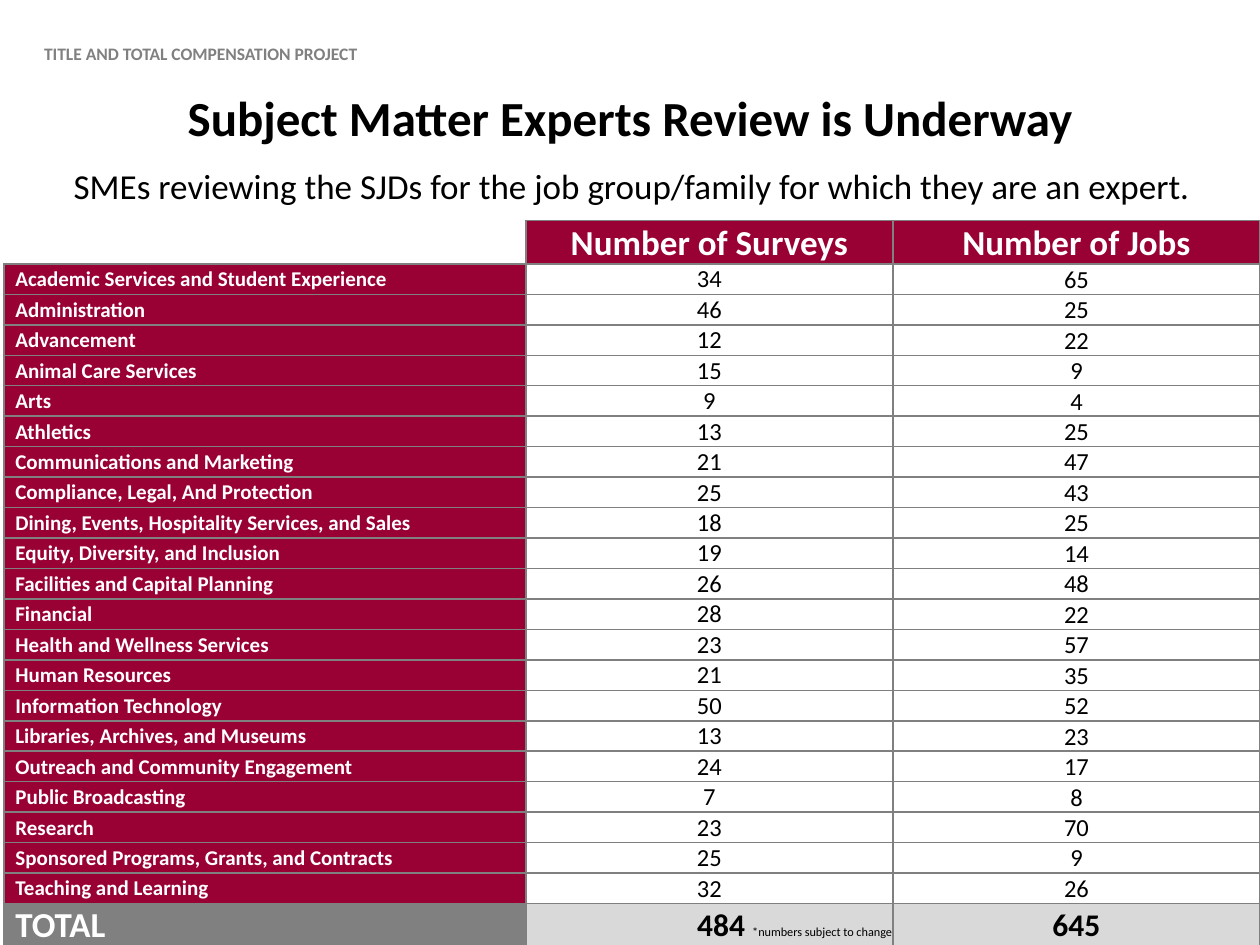
from typing import NamedTuple

import pptx
import pptx.dml.color
import pptx.enum.text
import pptx.oxml
import pptx.oxml.ns
import pptx.util
from pptx.util import Cm

MAROON, GRAY, PALE = "990033", "808080", "D9D9D9"
BLACK, WHITE = "000000", "FFFFFF"
ALIGN = pptx.enum.text.PP_ALIGN
ANCHOR = pptx.enum.text.MSO_ANCHOR


class JobGroup(NamedTuple):
    name: str
    surveys: int
    jobs: int


class Margins(NamedTuple):
    left: float
    top: float
    right: float
    bottom: float


JOB_GROUPS = [
    JobGroup("Academic Services and Student Experience", 34, 65),
    JobGroup("Administration", 46, 25),
    JobGroup("Advancement", 12, 22),
    JobGroup("Animal Care Services", 15, 9),
    JobGroup("Arts", 9, 4),
    JobGroup("Athletics", 13, 25),
    JobGroup("Communications and Marketing", 21, 47),
    JobGroup("Compliance, Legal, And Protection", 25, 43),
    JobGroup("Dining, Events, Hospitality Services, and Sales", 18, 25),
    JobGroup("Equity, Diversity, and Inclusion", 19, 14),
    JobGroup("Facilities and Capital Planning", 26, 48),
    JobGroup("Financial", 28, 22),
    JobGroup("Health and Wellness Services", 23, 57),
    JobGroup("Human Resources", 21, 35),
    JobGroup("Information Technology", 50, 52),
    JobGroup("Libraries, Archives, and Museums", 13, 23),
    JobGroup("Outreach and Community Engagement", 24, 17),
    JobGroup("Public Broadcasting", 7, 8),
    JobGroup("Research", 23, 70),
    JobGroup("Sponsored Programs, Grants, and Contracts", 25, 9),
    JobGroup("Teaching and Learning", 32, 26),
]

NAME_MARGINS = Margins(0.23, 0.02, 0.02, 0)
CELL_MARGINS = Margins(0.02, 0.02, 0.02, 0)
NO_MARGINS = Margins(0, 0, 0, 0)


def rgb(value: str):
    return pptx.dml.color.RGBColor.from_string(value)


def add_text(paragraph, text: str, *, size: float, color: str = BLACK,
             bold: bool = False, align=ALIGN.LEFT) -> None:
    paragraph.alignment = align
    run = paragraph.add_run()
    run.text = text
    run.font.name = "Calibri"
    run.font.size = pptx.util.Pt(size)
    run.font.bold = bold
    run.font.color.rgb = rgb(color)


def set_margins(target, margins: Margins) -> None:
    target.margin_left, target.margin_top = Cm(margins.left), Cm(margins.top)
    target.margin_right, target.margin_bottom = Cm(margins.right), Cm(margins.bottom)


def add_box(slide, left: float, top: float, width: float, height: float,
            margins: Margins, anchor=ANCHOR.TOP):
    """Add a wrapping text box and return its first paragraph."""
    frame = slide.shapes.add_textbox(Cm(left), Cm(top), Cm(width), Cm(height)).text_frame
    frame.word_wrap = True
    frame.vertical_anchor = anchor
    set_margins(frame, margins)
    return frame.paragraphs[0]


def set_borders(cell, sides: str) -> None:
    """Rule the named sides in gray and leave the others bare."""
    properties = cell._tc.get_or_add_tcPr()
    for position, side in enumerate("LRTB"):
        paint = (f'<a:solidFill><a:srgbClr val="{GRAY}"/></a:solidFill>'
                 if side in sides else "<a:noFill/>")
        line = pptx.oxml.parse_xml(
            f'<a:ln{side} {pptx.oxml.ns.nsdecls("a")} w="{pptx.util.Pt(1)}">'
            f"{paint}</a:ln{side}>")
        properties.insert(position, line)


def style_cell(cell, fill: str = "", margins: Margins = CELL_MARGINS,
               anchor=ANCHOR.MIDDLE, sides: str = "LRTB"):
    """Format a cell and return its paragraph."""
    set_margins(cell, margins)
    cell.vertical_anchor = anchor
    if fill:
        cell.fill.solid()
        cell.fill.fore_color.rgb = rgb(fill)
    else:
        cell.fill.background()
    set_borders(cell, sides)
    return cell.text_frame.paragraphs[0]


def add_survey_table(slide) -> None:
    end_height, groups_height = Cm(0.87), Cm(12.86)
    total_row = len(JOB_GROUPS) + 1
    table = slide.shapes.add_table(total_row + 1, 3, Cm(0.08), Cm(4.45), Cm(25.32),
                                   groups_height + 2 * end_height).table
    table.first_row = table.horz_banding = False
    for column, width in zip(table.columns, (10.52, 7.4, 7.4)):
        column.width = Cm(width)
    for row in table.rows:
        row.height = groups_height // len(JOB_GROUPS)
    table.rows[0].height = table.rows[total_row].height = end_height

    # Column headings
    style_cell(table.cell(0, 0), margins=NO_MARGINS, sides="RB")
    for column, heading in enumerate(("Number of Surveys", "Number of Jobs"), 1):
        add_text(style_cell(table.cell(0, column), MAROON), heading,
                 size=20, color=WHITE, bold=True, align=ALIGN.CENTER)

    # One row per job group
    for row, group in enumerate(JOB_GROUPS, 1):
        add_text(style_cell(table.cell(row, 0), MAROON, NAME_MARGINS), group.name,
                 size=12, color=WHITE, bold=True)
        surveys = style_cell(table.cell(row, 1), margins=NO_MARGINS, anchor=ANCHOR.BOTTOM)
        jobs = style_cell(table.cell(row, 2))
        for paragraph, count in ((surveys, group.surveys), (jobs, group.jobs)):
            add_text(paragraph, str(count), size=14, align=ALIGN.CENTER)

    # Totals
    add_text(style_cell(table.cell(total_row, 0), GRAY, NAME_MARGINS), "TOTAL",
             size=20, color=WHITE, bold=True)
    survey_total = style_cell(table.cell(total_row, 1), PALE)
    add_text(survey_total, f"{sum(group.surveys for group in JOB_GROUPS)} ",
             size=18, bold=True, align=ALIGN.RIGHT)
    add_text(survey_total, "*numbers subject to change", size=7, align=ALIGN.RIGHT)
    # The published job total is stated, not summed from the rows
    add_text(style_cell(table.cell(total_row, 2), PALE), "645",
             size=18, bold=True, align=ALIGN.CENTER)


def main() -> None:
    deck = pptx.Presentation()
    deck.slide_width, deck.slide_height = Cm(25.4), Cm(19.05)
    slide = deck.slides.add_slide(deck.slide_layouts[6])

    # Project name, title and introduction
    project = add_box(slide, 0, 0.61, 25.4, 0.94, Margins(0.89, 0.13, 1.27, 0.13),
                      ANCHOR.MIDDLE)
    add_text(project, "TITLE AND TOTAL COMPENSATION PROJECT",
             size=10, color=GRAY, bold=True)
    title = add_box(slide, 0, 0.84, 25.4, 0.43, Margins(0.76, 2.29, 0.76, 0.13))
    add_text(title, "Subject Matter Experts Review is Underway",
             size=28, bold=True, align=ALIGN.CENTER)
    introduction = add_box(slide, 0.99, 3.18, 23.5, 2.97, Margins(0.25, 0.13, 0.25, 0.13))
    add_text(introduction, "SMEs reviewing the SJDs for the job group/family "
             "for which they are an expert.", size=20, align=ALIGN.CENTER)

    add_survey_table(slide)
    deck.save("out.pptx")


if __name__ == "__main__":
    main()
